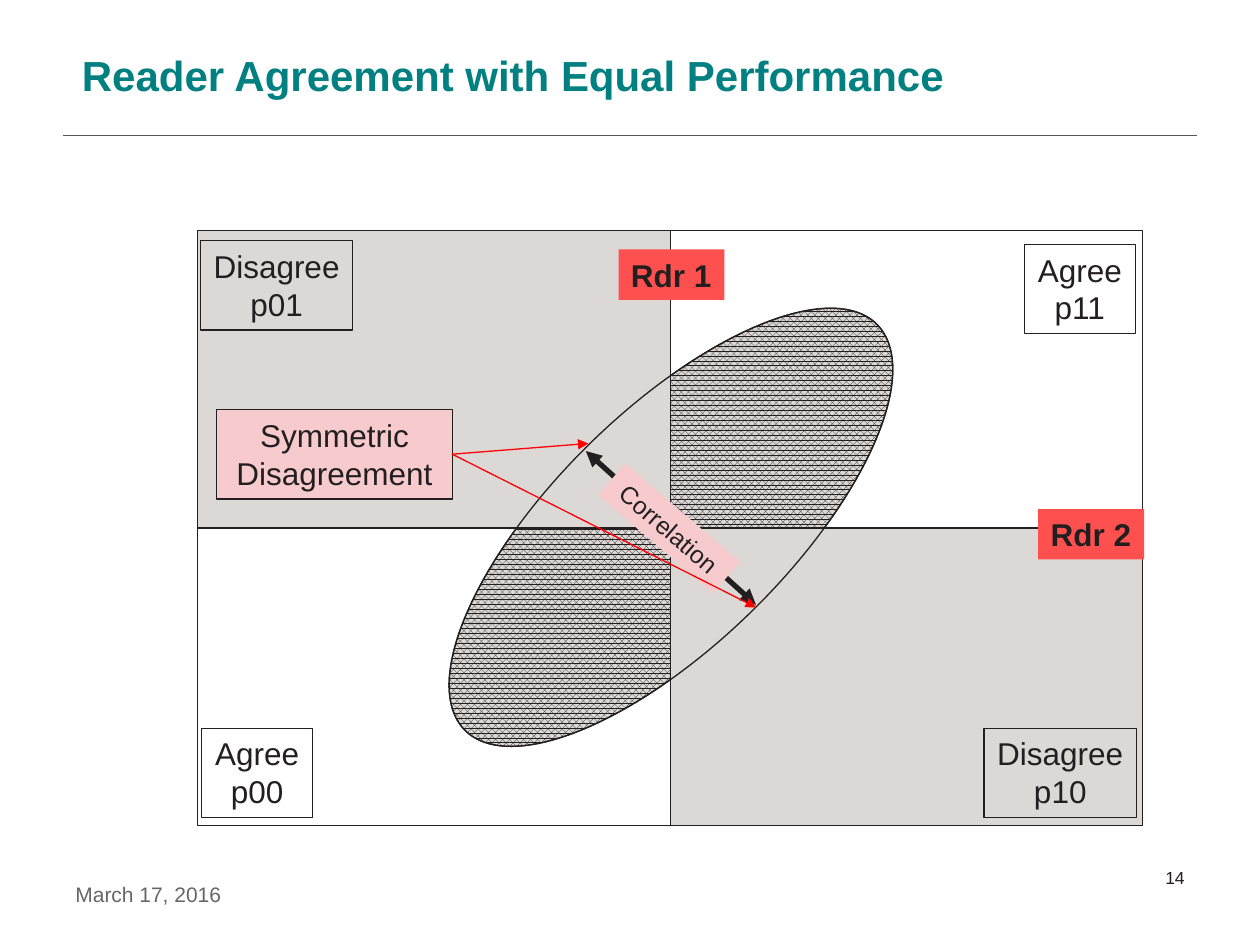
"""Build the reader agreement slide."""
import pptx
import pptx.dml.color
import pptx.enum.dml
import pptx.enum.shapes
import pptx.enum.text
import pptx.oxml.ns
import pptx.util
from lxml import etree

UNIT = 9144
THEME = {
    "font": "Arial", "ink": "231F20", "gray": "DCD8D6", "pink": "F7CBCE",
    "red": "FF5050", "arrow": "FF0000", "title": "008080", "rule": "5E5356",
    "date": "666666",
    "head": 24, "body": 18, "small": 14, "foot": 12, "num": 10,
}
KIND = pptx.enum.shapes.MSO_SHAPE
ALIGN = pptx.enum.text.PP_ALIGN
LEFT, MID, RIGHT = ALIGN.LEFT, ALIGN.CENTER, ALIGN.RIGHT

TITLE = "Reader Agreement with Equal Performance"
GRID = {"left": 157, "top": 183, "wide": 375, "high": 236}
CELLS = [(0, 0, "gray"), (0, 1, None), (1, 1, "gray"), (1, 0, None)]
OVAL = (303, 326, 459, 185)
TILT = 315.5
AXES = [((532, 190), (532, 647)), ((157, 419), (893, 419))]
RULE = ((50, 107), (950, 107))
SPAN = ((465, 358), (600, 480))
ENDS = [(467, 352), (600, 482)]

READER = {"fill": "red", "bold": True, "align": LEFT}
BOX = {"line": "ink"}
NOTE = {"fill": "pink", "wrap": True}
FOOT = {"wrap": True, "align": LEFT, "size": "foot", "color": "date"}
LABELS = [
    (["March 17, 2016"], (50, 695, 292, 30), FOOT),
    (["14"], (742, 683, 208, 50),
     {"wrap": True, "align": RIGHT, "size": "num"}),
    (["Rdr 1"], (491, 198, 84, 40), READER),
    (["Disagree", "p01"], (159, 191, 121, 71), BOX),
    (["Disagree", "p10"], (781, 578, 121, 71), BOX),
    (["Agree", "p11"], (813, 194, 88, 71), BOX),
    (["Agree", "p00"], (160, 578, 88, 71), BOX),
]
NOTES = [
    (["Correlation"], (471, 403, 120, 33),
     {**NOTE, "size": "small", "turn": 40.6}),
    (["Rdr 2"], (824, 404, 84, 40), READER),
    (["Symmetric Disagreement"], (172, 325, 187, 71), {**NOTE, **BOX}),
]


def emu(nums):
    return [num * UNIT for num in nums]


def rgb(name):
    return pptx.dml.color.RGBColor.from_string(THEME[name])


def style(item, vals):
    for name, val in vals.items():
        setattr(item, name, val)


def paint(shape, fill=None, line=None):
    if fill:
        shape.fill.solid()
        shape.fill.fore_color.rgb = rgb(fill)
    else:
        shape.fill.background()
    if line:
        shape.line.color.rgb = rgb(line)
        shape.line.width = pptx.util.Pt(0.75)
    else:
        shape.line.fill.background()


def write(para, text, size, color, bold, align):
    para.text = text
    para.alignment = align
    style(para.font, {"name": THEME["font"], "bold": bold,
                      "size": pptx.util.Pt(THEME[size])})
    para.font.color.rgb = rgb(color)


def label(slide, lines, area, fill=None, line=None, size="body", color="ink",
          bold=False, align=MID, wrap=False, turn=0):
    box = slide.shapes.add_textbox(*emu(area))
    box.rotation = turn
    paint(box, fill, line)
    frame = box.text_frame
    frame.word_wrap = wrap
    for num, text in enumerate(lines):
        para = frame.add_paragraph() if num else frame.paragraphs[0]
        write(para, text, size, color, bold, align)
    return box


def form(slide, kind, area, fill=None, turn=0):
    shape = slide.shapes.add_shape(kind, *emu(area))
    style(shape, {"rotation": turn})
    shape.shadow.inherit = False
    paint(shape, fill, "ink")
    return shape


def link(slide, start, end, color="ink", width=0.75, tips=()):
    line = slide.shapes.add_connector(
        pptx.enum.shapes.MSO_CONNECTOR.STRAIGHT, *emu(start + end))
    line.line.color.rgb = rgb(color)
    line.line.width = pptx.util.Pt(width)
    qn = pptx.oxml.ns.qn
    for tip in tips:
        etree.SubElement(line.line._get_or_add_ln(), qn(f"a:{tip}"),
                         type="triangle")
    etree.SubElement(line._element.spPr, qn("a:effectLst"))
    return line


def main():
    deck = pptx.Presentation()
    style(deck, {"slide_width": 1000 * UNIT, "slide_height": 750 * UNIT})
    slide = deck.slides.add_slide(deck.slide_layouts[5])

    title = slide.shapes.title
    style(title, dict(zip(("left", "top", "width", "height"),
                          emu((55, 29, 742, 61)))))
    style(title.text_frame, {
        "word_wrap": True,
        "auto_size": pptx.enum.text.MSO_AUTO_SIZE.NONE,
        "vertical_anchor": pptx.enum.text.MSO_ANCHOR.MIDDLE})
    write(title.text_frame.paragraphs[0], TITLE, "head", "title", True, LEFT)

    link(slide, *RULE, color="rule", width=0.25)
    for axis in AXES:
        link(slide, *axis)

    oval = form(slide, KIND.OVAL, OVAL, turn=TILT)
    oval.fill.patterned()
    oval.fill.pattern = pptx.enum.dml.MSO_PATTERN.PERCENT_75
    oval.fill.fore_color.rgb = rgb("ink")
    oval.fill.back_color.rgb = rgb("gray")
    wide, high = GRID["wide"], GRID["high"]
    for col, row, fill in CELLS:
        area = (GRID["left"] + col * wide, GRID["top"] + row * high,
                wide, high)
        form(slide, KIND.RECTANGLE, area, fill)
    form(slide, KIND.OVAL, OVAL, turn=TILT)

    for lines, area, look in LABELS:
        label(slide, lines, area, **look)
    link(slide, *SPAN, width=3, tips=("headEnd", "tailEnd"))
    for lines, area, look in NOTES:
        box = label(slide, lines, area, **look)
    for end in ENDS:
        line = link(slide, (358, 361), end, "arrow", tips=("tailEnd",))
        line.begin_connect(box, 3)

    deck.save("out.pptx")


if __name__ == "__main__":
    main()
